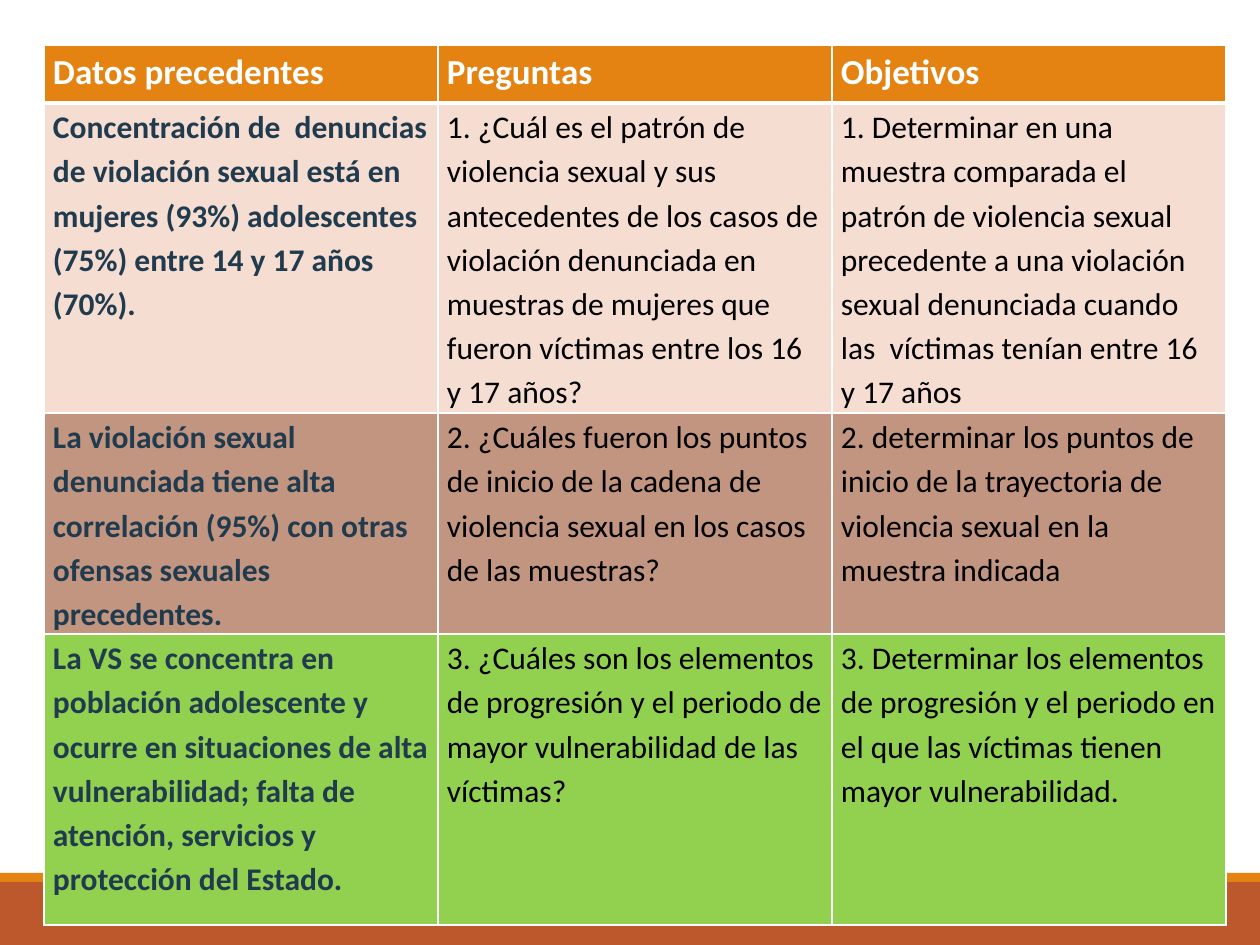
import pptx
import pptx.util
import pptx.dml.color
import pptx.enum.shapes
import pptx.enum.text
import pptx.oxml.ns
from lxml import etree

PX = 914400 // 126
FONT = "Calibri"
WHITE, BLACK, NAVY = "FFFFFF", "000000", "203A4E"
ORANGE, RUST = "E48312", "BD582C"

HEADINGS = ("Datos precedentes", "Preguntas", "Objetivos")
FINDINGS = [
    ("Concentración de  denuncias de violación sexual está en mujeres (93%) "
     "adolescentes (75%) entre 14 y 17 años (70%).",
     "1. ¿Cuál es el patrón de violencia sexual y sus antecedentes de los casos de "
     "violación denunciada en muestras de mujeres que fueron víctimas entre los 16 y 17 años?",
     "1. Determinar en una muestra comparada el patrón de violencia sexual precedente a "
     "una violación sexual denunciada cuando las  víctimas tenían entre 16 y 17 años"),
    ("La violación sexual denunciada tiene alta correlación (95%) con otras ofensas "
     "sexuales precedentes.",
     "2. ¿Cuáles fueron los puntos de inicio de la cadena de violencia sexual en los "
     "casos de las muestras?",
     "2. determinar los puntos de inicio de la trayectoria de violencia sexual en la "
     "muestra indicada"),
    ("La VS se concentra en población adolescente y ocurre en situaciones de alta "
     "vulnerabilidad; falta de atención, servicios y protección del Estado.",
     "3. ¿Cuáles son los elementos de progresión y el periodo de mayor vulnerabilidad "
     "de las víctimas?",
     "3. Determinar los elementos de progresión y el periodo en el que las víctimas "
     "tienen mayor vulnerabilidad."),
]
ROW_FILLS = (ORANGE, "F5DDD2", "C29580", "92D050")
ROW_HEIGHTS = (58, 310, 221, 291)
COLUMN_WIDTH = 394
TABLE_LEFT, TABLE_TOP = 44, 45
FOOTER_BANDS = [(882, 63, RUST), (873, 9, ORANGE)]  # top, height, fill


def px(count):
    return pptx.util.Emu(count * PX)


def rgb(value):
    return pptx.dml.color.RGBColor.from_string(value)


def paint(target, color):
    target.fill.solid()
    target.fill.fore_color.rgb = rgb(color)


def write(frame, text, size=18, color=BLACK, bold=False, align="LEFT"):
    paragraph = frame.paragraphs[0]
    paragraph.alignment = getattr(pptx.enum.text.PP_ALIGN, align)
    paragraph.line_spacing = 1.15
    run = paragraph.add_run()
    run.text = text
    run.font.name = FONT
    run.font.size = pptx.util.Pt(size)
    run.font.bold = bold
    run.font.color.rgb = rgb(color)


def add_borders(cell, top, bottom):
    """Draw white cell borders; top and bottom widths are in points."""
    qn = pptx.oxml.ns.qn
    properties = cell._tc.get_or_add_tcPr()
    for side, width in (("L", 1), ("R", 1), ("T", top), ("B", bottom)):
        line = etree.SubElement(properties, qn("a:ln" + side), w=str(pptx.util.Pt(width)))
        fill = etree.SubElement(line, qn("a:solidFill"))
        etree.SubElement(fill, qn("a:srgbClr"), val=WHITE)


def add_footer(slide, width):
    for top, height, color in FOOTER_BANDS:
        band = slide.shapes.add_shape(
            pptx.enum.shapes.MSO_SHAPE.RECTANGLE, 0, px(top), width, px(height))
        band.shadow.inherit = False
        band.line.fill.background()
        paint(band, color)


def add_findings_table(slide):
    rows = [HEADINGS] + FINDINGS
    columns = len(HEADINGS)
    table = slide.shapes.add_table(
        len(rows), columns, px(TABLE_LEFT), px(TABLE_TOP),
        px(COLUMN_WIDTH * columns), px(sum(ROW_HEIGHTS))).table
    for column in table.columns:
        column.width = px(COLUMN_WIDTH)
    for r, texts in enumerate(rows):
        table.rows[r].height = px(ROW_HEIGHTS[r])
        for c, text in enumerate(texts):
            cell = table.cell(r, c)
            cell.margin_left = cell.margin_right = px(9)
            cell.margin_top = cell.margin_bottom = 0
            add_borders(cell, top=3 if r == 1 else 1, bottom=3 if r == 0 else 1)
            paint(cell, ROW_FILLS[r])
            if r == 0:
                write(cell.text_frame, text, size=20, color=WHITE, bold=True, align="JUSTIFY")
            elif c == 0:
                write(cell.text_frame, text, color=NAVY, bold=True)
            else:
                write(cell.text_frame, text)


def main():
    deck = pptx.Presentation()
    deck.slide_width, deck.slide_height = pptx.util.Inches(10), pptx.util.Inches(7.5)
    slide = deck.slides.add_slide(deck.slide_layouts[6])
    add_footer(slide, deck.slide_width)
    add_findings_table(slide)
    deck.save("out.pptx")


if __name__ == "__main__":
    main()
